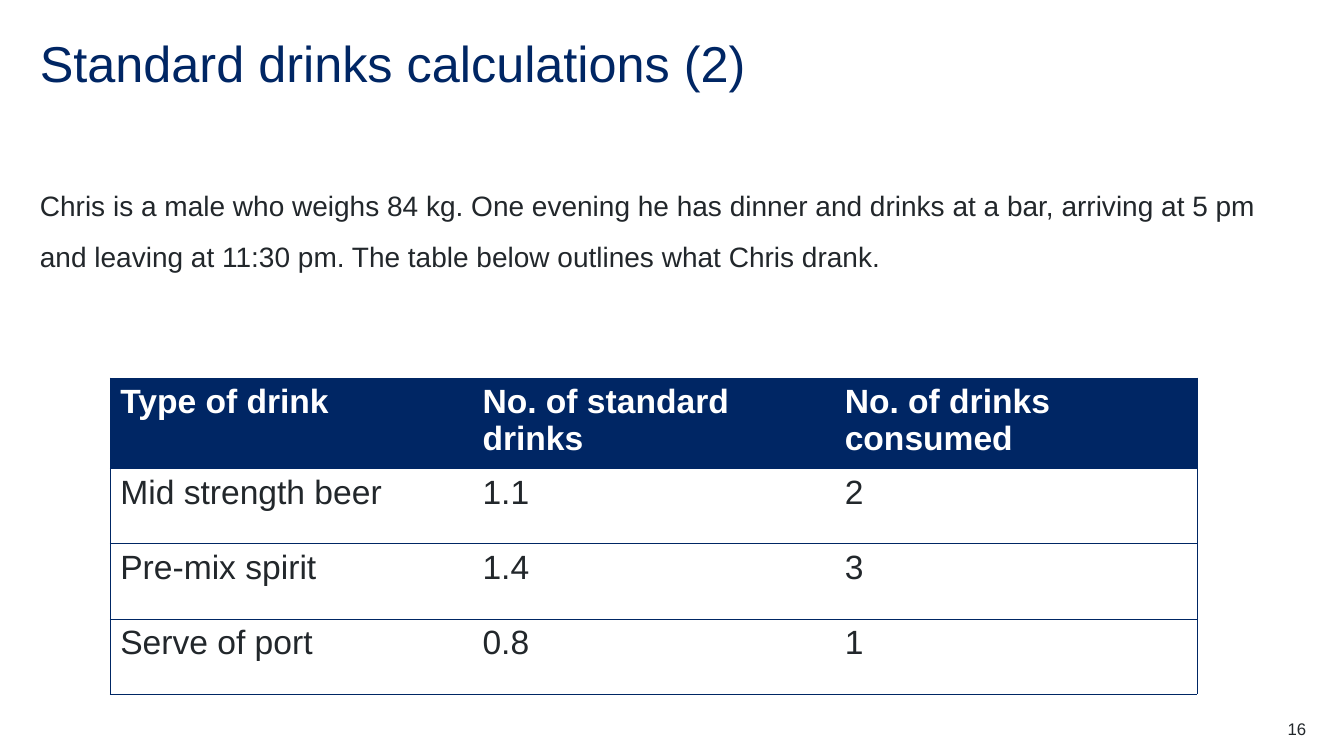
from dataclasses import dataclass

from pptx import Presentation
from pptx.dml.color import RGBColor
from pptx.enum.text import PP_ALIGN
from pptx.oxml.ns import qn
from pptx.slide import Slide
from pptx.table import _Cell
from pptx.util import Emu, Pt
from lxml.etree import SubElement

EMU_PER_PX = 9525


@dataclass(frozen=True)
class Theme:
    font: str = "Arial"
    navy: str = "002664"
    ink: str = "22272B"
    white: str = "FFFFFF"
    title_size: int = 36
    table_size: int = 24
    body_size: int = 20
    number_size: int = 12
    border_width: float = 0.5


THEME = Theme()


@dataclass(frozen=True)
class TextBlock:
    text: str
    left: int
    top: int
    width: int
    height: int
    size: int
    color: str
    line_spacing: float = 1.0
    alignment: PP_ALIGN = PP_ALIGN.LEFT


TEXT_BLOCKS = [
    TextBlock("Standard drinks calculations (2)", 38, 37, 1206, 58,
              THEME.title_size, THEME.navy, line_spacing=0.9),
    TextBlock("Chris is a male who weighs 84 kg. One evening he has dinner and drinks "
              "at a bar, arriving at 5 pm and leaving at 11:30 pm. The table below "
              "outlines what Chris drank.", 38, 164, 1206, 505,
              THEME.body_size, THEME.ink, line_spacing=1.5),
    TextBlock("16", 1168, 684, 76, 19, THEME.number_size, THEME.ink,
              alignment=PP_ALIGN.RIGHT),
]

DRINKS = [
    ("Type of drink", "No. of standard drinks", "No. of drinks consumed"),
    ("Mid strength beer", "1.1", "2"),
    ("Pre-mix spirit", "1.4", "3"),
    ("Serve of port", "0.8", "1"),
]
TABLE_LEFT, TABLE_TOP = 105, 360
COLUMN_WIDTH, HEADER_HEIGHT, ROW_HEIGHT = 345, 81, 71.5


def px(length: float) -> Emu:
    return Emu(round(length * EMU_PER_PX))


def add_text(slide: Slide, block: TextBlock) -> None:
    shape = slide.shapes.add_textbox(px(block.left), px(block.top),
                                     px(block.width), px(block.height))
    frame = shape.text_frame
    frame.word_wrap = True
    frame.margin_left = frame.margin_right = frame.margin_top = frame.margin_bottom = 0
    paragraph = frame.paragraphs[0]
    paragraph.text = block.text
    paragraph.alignment = block.alignment
    paragraph.line_spacing = block.line_spacing
    paragraph.font.name = THEME.font
    paragraph.font.size = Pt(block.size)
    paragraph.font.color.rgb = RGBColor.from_string(block.color)


def set_borders(cell: _Cell, visible_sides: str) -> None:
    properties = cell._tc.get_or_add_tcPr()
    for side in "LRTB":
        line = SubElement(properties, qn(f"a:ln{side}"), w=str(Pt(THEME.border_width)))
        if side in visible_sides:
            fill = SubElement(line, qn("a:solidFill"))
            SubElement(fill, qn("a:srgbClr"), val=THEME.navy)
        else:
            SubElement(line, qn("a:noFill"))


def style_cell(cell: _Cell, text: str, is_header: bool) -> None:
    cell.fill.solid()
    cell.fill.fore_color.rgb = RGBColor.from_string(THEME.navy if is_header else THEME.white)
    paragraph = cell.text_frame.paragraphs[0]
    paragraph.text = text
    paragraph.font.name = THEME.font
    paragraph.font.size = Pt(THEME.table_size)
    paragraph.font.bold = is_header
    paragraph.font.color.rgb = RGBColor.from_string(THEME.white if is_header else THEME.ink)


def add_drinks_table(slide: Slide) -> None:
    row_count, column_count = len(DRINKS), len(DRINKS[0])
    height = HEADER_HEIGHT + ROW_HEIGHT * (row_count - 1)
    table = slide.shapes.add_table(row_count, column_count, px(TABLE_LEFT), px(TABLE_TOP),
                                   px(COLUMN_WIDTH * column_count), px(height)).table
    table.first_row = table.horz_banding = False
    for column in table.columns:
        column.width = px(COLUMN_WIDTH)
    for row_index, values in enumerate(DRINKS):
        table.rows[row_index].height = px(ROW_HEIGHT if row_index else HEADER_HEIGHT)
        for column_index, value in enumerate(values):
            cell = table.cell(row_index, column_index)
            # Horizontal rules everywhere, vertical rules on the outside only
            sides = "TB"
            if column_index == 0:
                sides += "L"
            if column_index == column_count - 1:
                sides += "R"
            set_borders(cell, sides)
            style_cell(cell, value, is_header=row_index == 0)


def main() -> None:
    presentation = Presentation()
    presentation.slide_width, presentation.slide_height = px(1280), px(720)
    slide = presentation.slides.add_slide(presentation.slide_layouts[6])

    # Title, introduction and page number
    for block in TEXT_BLOCKS:
        add_text(slide, block)

    # Drinks table
    add_drinks_table(slide)

    presentation.save("out.pptx")


if __name__ == "__main__":
    main()
